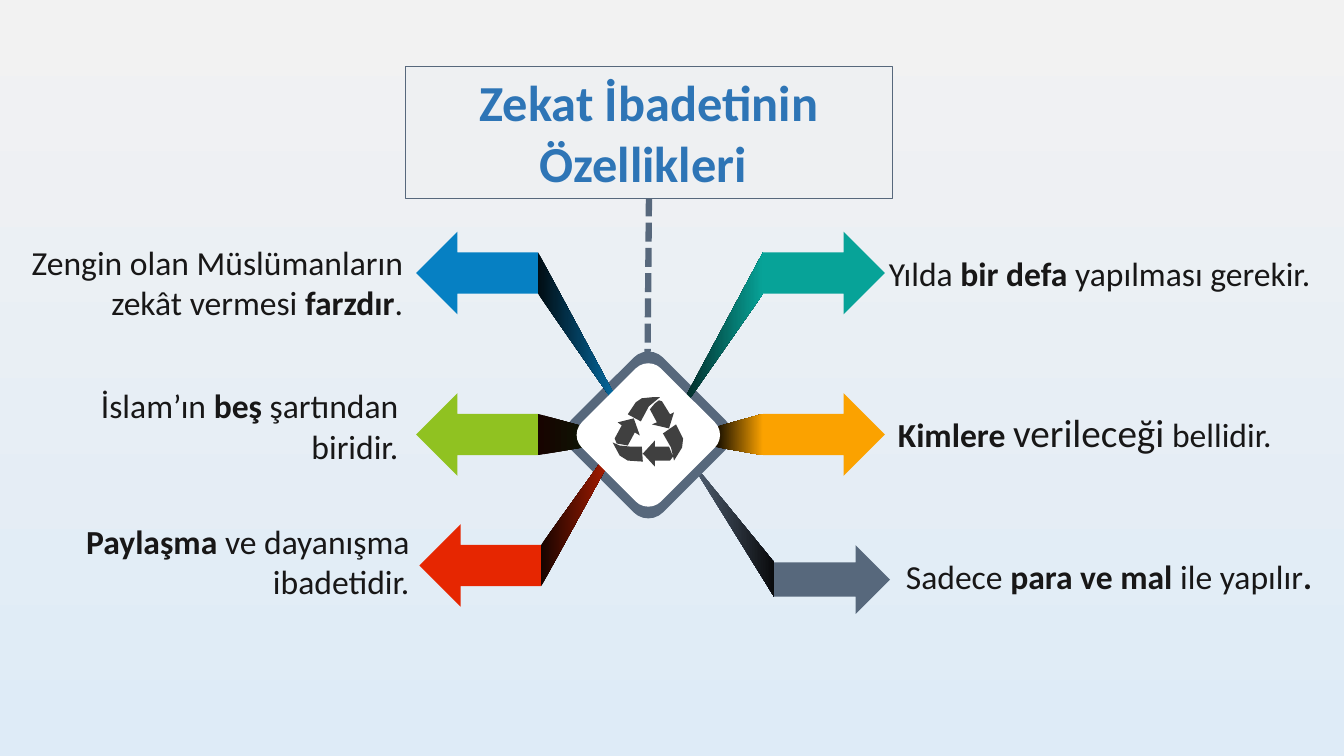
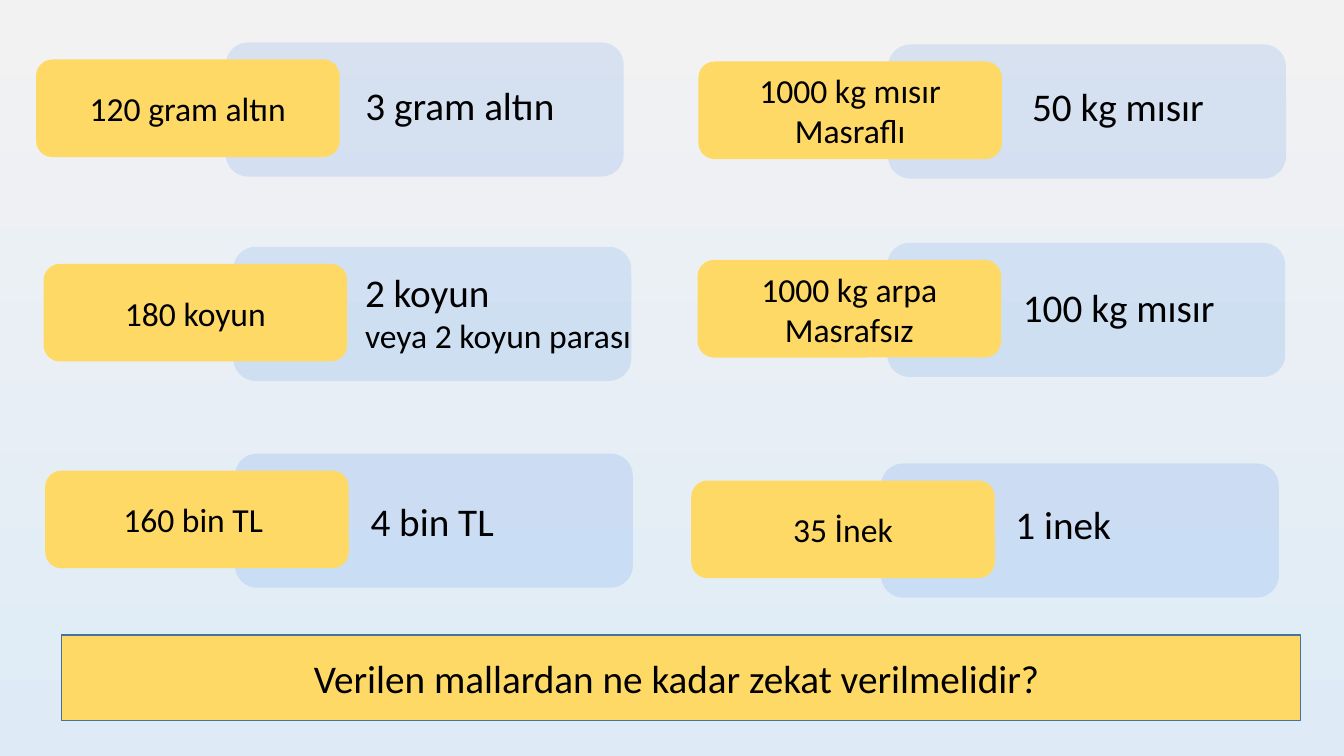
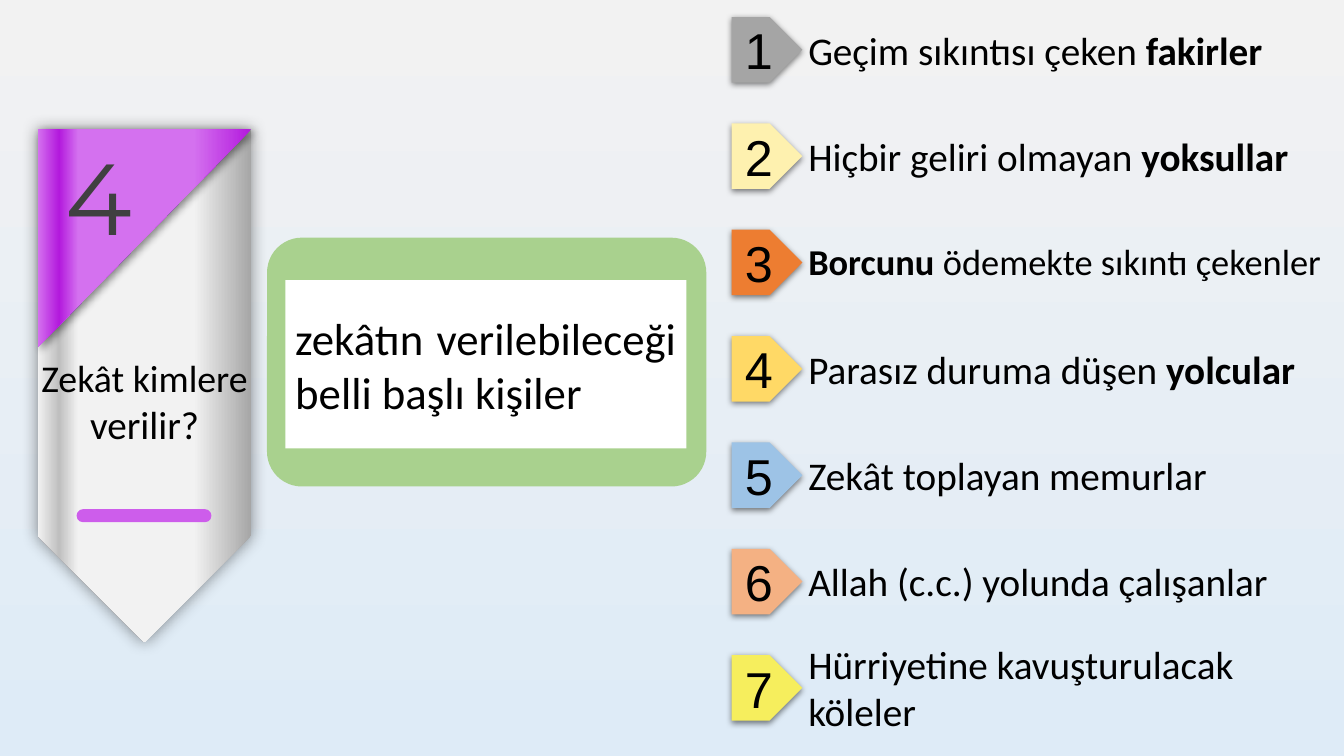
from lxml import etree
from pptx import Presentation
from pptx import util as u
from pptx.dml.color import RGBColor
from pptx.enum import dml, shapes, text
from pptx.oxml.ns import qn

HUE = {
    "top": "F2F2F2", "foot": "DEEBF7", "black": "000000", "white": "FFFFFF",
    "ink": "181717", "title": "2E75B6", "panel": "EEF0F2", "slate": "57687C",
    "teal": "07A398", "orange": "FBA200", "blue": "0680C3", "red": "E62601",
    "lime": "90C221", "icon": "404040", "gold": "FFD966", "edge": "43739E",
    "pale": "2776EA", "green": "A9D18E", "violet": "B319DD", "lilac": "D471EF",
    "bar": "CD5DEB", "grey": "A6A6A6", "silver": "BFBFBF",
    "slate_dk": "090A0C", "teal_dk": "01100F", "orange_dk": "191000",
    "blue_dk": "010D13", "red_dk": "170400", "lime_dk": "0E1303",
    "one": "A5A5A5", "two": "FEF1AF", "three": "ED7D31", "five": "9DC3E6",
    "six": "F4B183", "seven": "F6EE5D",
}
KIND = shapes.MSO_SHAPE
ALIGN = text.PP_ALIGN
MID = text.MSO_ANCHOR.MIDDLE
BOLD = {"bold": True}


def rgb(name):
    return RGBColor.from_string(HUE[name])


def cms(*vals):
    return [u.Cm(v) for v in vals]


def child(node, tag, **attrs):
    return etree.SubElement(node, qn(tag), {k: str(v) for k, v in attrs.items()})


def blend(fill, root, stops, angle):
    """Gradient from (percent, colour) stops; angle runs clockwise."""
    fill.gradient()
    fill.gradient_angle = -angle % 360
    group = root.find(".//" + qn("a:gsLst"))
    for old in list(group):
        group.remove(old)
    for pos, name in stops:
        stop = child(group, "a:gs", pos=pos * 1000)
        child(stop, "a:srgbClr", val=HUE[name])


def paint(shape, fill, line=None, width=1, shadow=None, alpha=None):
    """Fill is a colour name or a (stops, angle) pair."""
    shape.shadow.inherit = False
    props = shape._element.spPr
    if isinstance(fill, str):
        shape.fill.solid()
        shape.fill.fore_color.rgb = rgb(fill)
    else:
        blend(shape.fill, props, *fill)
    if alpha:
        child(props.find(".//" + qn("a:srgbClr")), "a:alpha", val=alpha * 1000)
    if line:
        shape.line.color.rgb = rgb(line)
        shape.line.width = u.Pt(width)
    else:
        shape.line.fill.background()
    if shadow:
        dark, blur, dist, angle = shadow
        drop = child(props.find(qn("a:effectLst")), "a:outerShdw",
                     blurRad=u.Pt(blur), dist=u.Pt(dist), dir=angle * 60000,
                     algn="ctr", rotWithShape=0)
        tone = child(drop, "a:srgbClr", val=HUE["black"])
        child(tone, "a:alpha", val=dark * 1000)
    return shape


def block(slide, kind, box, fill, turn=0, adj=None, **look):
    shape = slide.shapes.add_shape(kind, *cms(*box))
    shape.rotation = turn
    if adj is not None:
        shape.adjustments[0] = adj
    return paint(shape, fill, **look)


def write(shape, paras, size, color="black", align=ALIGN.LEFT, font="Calibri", **frame):
    """Each paragraph is a list of runs: a string, or (string, font settings)."""
    body = shape.text_frame
    for key, val in {"word_wrap": True, **frame}.items():
        setattr(body, key, val)
    for i, runs in enumerate(paras):
        para = body.paragraphs[0] if i == 0 else body.add_paragraph()
        para.alignment = align
        for item in runs:
            words, extra = (item, {}) if isinstance(item, str) else item
            run = para.add_run()
            run.text = words
            run.font.color.rgb = rgb(color)
            for key, val in {"name": font, "size": u.Pt(size), **extra}.items():
                setattr(run.font, key, val)


def label(slide, box, paras, size, **look):
    write(slide.shapes.add_textbox(*cms(*box)), paras, size,
          auto_size=text.MSO_AUTO_SIZE.SHAPE_TO_FIT_TEXT, **look)


def outline(slide, loops, fill):
    first = loops[0][0]
    pen = slide.shapes.build_freeform(*cms(*first))
    for i, loop in enumerate(loops):
        if i:
            pen.move_to(*cms(*loop[0]))
        pen.add_line_segments([cms(*pt) for pt in loop[1:]], close=True)
    return paint(pen.convert_to_shape(), fill)


def new_slide(deck):
    slide = deck.slides.add_slide(deck.slide_layouts[6])
    blend(slide.background.fill, slide._element.cSld, [(0, "top"), (100, "foot")], 90)
    return slide


def arrow(slide, box, hub, color, stops, left=False):
    """Block arrow with a ribbon narrowing from its shaft to the hub point."""
    x, y, w, h = box
    block(slide, KIND.LEFT_ARROW if left else KIND.RIGHT_ARROW, box, color)
    base = x + w if left else x
    ribbon = [(base, y + h * 3 / 4), hub, (base, y + h / 4)]
    outline(slide, [ribbon], (stops, 0))


def diamond(slide, mid, side, fill):
    x, y = mid
    block(slide, KIND.ROUNDED_RECTANGLE, (x - side / 2, y - side / 2, side, side),
          fill, turn=315, adj=0.16)


def cycle(slide, x, y, w):
    """Three chasing arrows, drawn on a grid 71 units wide."""
    loops = [
        [(0, 45), (7, 48), (17, 49), (29, 49), (30, 64), (15, 63), (7, 58)],
        [(42, 43), (42, 49), (56, 49), (60, 59), (57, 63), (42, 63), (42, 69), (30, 56)],
        [(63, 27), (70, 41), (69, 50), (61, 63), (58, 50), (50, 36)],
        [(21, 21), (27, 38), (22, 35), (15, 48), (4, 46), (2, 41), (9, 28), (5, 25)],
        [(46, 3), (49, 4), (57, 17), (61, 15), (56, 31), (39, 27), (44, 25),
         (37, 12), (42, 6)],
        [(39, 0), (47, 0), (36, 9), (28, 24), (15, 17), (23, 5), (29, 1)],
    ]
    unit = w / 71
    outline(slide, [[(x + a * unit, y + b * unit) for a, b in loop] for loop in loops],
            "icon")


def stem(slide, start, end):
    line = slide.shapes.add_connector(shapes.MSO_CONNECTOR.STRAIGHT, *cms(*start, *end))
    line.line.color.rgb = rgb("slate")
    line.line.width = u.Pt(4.5)
    line.line.dash_style = dml.MSO_LINE.SQUARE_DOT
    props = line._element.spPr
    child(props.find(qn("a:ln")), "a:tailEnd", type="triangle")
    child(props, "a:effectLst")


def traits(deck):
    slide = new_slide(deck)
    mid, w, h = (16.34, 10.96), 3.07, 2.08
    arrow(slide, (19.51, 13.74, 2.92, 1.73), (17.27, 11.43), "slate",
          [(0, "slate"), (100, "slate_dk")])
    stem(slide, (16.36, 4.34), (16.31, 9.96))
    diamond(slide, mid, 3.28, "slate")
    for x, y, hub, color, stops in [
        (19.23, 5.84, (16.81, 10.87), "teal", [(0, "teal_dk"), (100, "teal")]),
        (19.23, 9.91, (16.92, 11.07), "orange",
         [(0, "orange_dk"), (50, "orange_dk"), (100, "orange")]),
        (10.49, 5.84, (15.98, 10.87), "blue", [(0, "blue_dk"), (100, "blue")]),
        (10.57, 13.21, (16.03, 10.41), "red", [(0, "red_dk"), (100, "red")]),
        (10.49, 9.91, (15.88, 11.07), "lime",
         [(0, "red_dk"), (50, "lime_dk"), (100, "lime")]),
    ]:
        arrow(slide, (x, y, w, h), hub, color, stops, left=x < mid[0])
    diamond(slide, mid, 2.82, "white")
    cycle(slide, 15.44, 10.01, 1.8)
    head = block(slide, KIND.RECTANGLE, (10.21, 1.68, 12.29, 3.33), "panel",
                 line="slate", width=0.75)
    write(head, [[("Zekat İbadetinin Özellikleri ", BOLD)]], 36, "title", ALIGN.CENTER,
          vertical_anchor=text.MSO_ANCHOR.TOP)
    for box, runs in [
        ((0.61, 9.58, 9.68, 2.31), ["İslam’ın ", ("beş", BOLD), " şartından biridir."]),
        ((22.15, 6.25, 11.26, 1.27),
         ["Yılda ", ("bir defa ", BOLD), "yapılması gerekir."]),
        ((0, 5.97, 10.41, 2.31),
         ["Zengin olan Müslümanların zekât vermesi", (" farzdır", BOLD), "."]),
        ((22.38, 10.16, 11.05, 1.45),
         [("Kimlere ", BOLD), ("verileceği", {"size": u.Pt(28)}), " bellidir."]),
        ((22.58, 13.89, 11.28, 1.27),
         ["Sadece ", ("para ve mal ", BOLD), "ile yapılır", (".", BOLD)]),
        ((1.17, 13, 9.4, 2.31), [("Paylaşma", BOLD), " ve dayanışma ibadetidir."]),
    ]:
        label(slide, box, [runs], 24, color="ink",
              align=ALIGN.RIGHT if box[0] < mid[0] else ALIGN.LEFT)


def pads(size):
    return {"margin_" + side: u.Cm(size) for side in ("left", "top", "right", "bottom")}


def pair(slide, x, y, goods):
    block(slide, KIND.ROUNDED_RECTANGLE, (x + 4.78, y, 10.03, 3.38), "pale", alpha=13)
    front = block(slide, KIND.ROUNDED_RECTANGLE, (x, y + 0.43, 7.65, 2.46), "gold")
    write(front, [[row] for row in goods], 24, align=ALIGN.CENTER,
          vertical_anchor=MID, **pads(0.25))


def amounts(deck):
    slide = new_slide(deck)
    small = {"size": u.Pt(24)}
    for x, y, goods, dx, dy, due in [
        (0.91, 1.07, ["120 gram altın"], 8.05, 0.86, ["3 gram altın"]),
        (1.1, 6.22, ["180 koyun"], 7.85, 0.41,
         ["2 koyun", ("veya 2 koyun parası", small)]),
        (1.14, 11.43, ["160 bin TL "], 7.95, 0.97, ["4 bin TL"]),
        (17.6, 1.12, ["1000 kg mısır", "Masraflı"], 8.16, 0.84, ["50 kg mısır"]),
        (17.58, 6.12, ["1000 kg arpa", "Masrafsız"], 7.95, 0.89, ["100 kg mısır"]),
        (17.42, 11.68, ["35 İnek"], 7.92, 0.79, ["1 inek"]),
    ]:
        pair(slide, x, y, goods)
        wide, high = (8.81, 2.49) if len(due) > 1 else (6.12, 1.45)
        label(slide, (x + dx, y + dy, wide, high), [[row] for row in due], 28)
    ask = block(slide, KIND.RECTANGLE, (1.55, 16, 31.22, 2.16), "gold", line="edge")
    write(ask, [["Verilen mallardan ne kadar zekat verilmelidir? "]], 28,
          align=ALIGN.CENTER, vertical_anchor=MID)


def banner(slide, x, y):
    """Folded pennant; the plate and its corner are turned a quarter."""
    long, wide, fold = 12.93, 5.38, 5.49
    plate = [(0, "grey"), (27, "top"), (81, "top"), (90, "silver"), (100, "top")]
    flap = [(0, "violet"), (27, "lilac"), (81, "lilac"), (90, "violet"), (100, "lilac")]
    for kind, size, stops, shadow in [
        (KIND.PENTAGON, long, plate, (44, 12, 0, 0)),
        (KIND.RIGHT_TRIANGLE, fold, flap, (46, 6, 3, 45)),
    ]:
        shift = (size - wide) / 2
        block(slide, kind, (x - shift, y + shift, size, wide), (stops, 90),
              turn=90, shadow=shadow)
    block(slide, KIND.ROUNDED_RECTANGLE, (x + 0.98, y + 9.57, 3.4, 0.33), "bar", adj=0.5)
    label(slide, (x + 0.45, y + 0.02, 2.49, 3.33), [["4"]], 72, color="icon",
          font="Montserrat")
    label(slide, (x - 0.39, y + 5.55, 6.17, 2.64),
          [[("Zekât kimlere ", {"size": u.Pt(27)}), "verilir?"]], 28, align=ALIGN.CENTER)


def topic(slide, x, y):
    block(slide, KIND.ROUNDED_RECTANGLE, (x, y, 11.07, 6.27), "green", adj=0.14)
    card = block(slide, KIND.RECTANGLE, (x + 0.46, y + 1.07, 10.11, 4.24), "white")
    write(card, [["zekâtın verilebileceği belli başlı kişiler"]], 32,
          align=ALIGN.JUSTIFY, vertical_anchor=MID)


def entry(slide, x, y, num, color, runs, size=28, wide=13.36, high=1.45):
    badge = block(slide, KIND.PENTAGON, (x, y, 1.78, 1.65), color, adj=0.5,
                  shadow=(50, 4.5, 1.5, 90))
    write(badge, [[str(num)]], 36, font="Arial", vertical_anchor=MID, **pads(0.33))
    label(slide, (x + 1.68, y + (1.65 - high) / 2, wide, high), [runs], size)


def people(deck):
    slide = new_slide(deck)
    banner(slide, 0.95, 3.26)
    topic(slide, 6.73, 5.99)
    rows = [
        ("one", ["Geçim sıkıntısı çeken ", ("fakirler", BOLD)], {}),
        ("two", ["Hiçbir geliri olmayan ", ("yoksullar", BOLD)], {}),
        ("three", [("Borcunu", BOLD), " ödemekte sıkıntı çekenler"],
         {"size": 26, "wide": 14.17}),
        ("gold", ["Parasız duruma düşen ", ("yolcular", BOLD)], {}),
        ("five", ["Zekât toplayan memurlar"], {}),
        ("six", ["Allah (c.c.) yolunda çalışanlar"], {}),
        ("seven", ["Hürriyetine kavuşturulacak köleler"], {"high": 2.64}),
    ]
    for i, (color, runs, look) in enumerate(rows):
        entry(slide, 18.44, 0.43 + 2.68 * i, i + 1, color, runs, **look)


def main():
    deck = Presentation()
    deck.slide_width, deck.slide_height = cms(33.87, 19.05)
    for build in (traits, amounts, people):
        build(deck)
    deck.save("out.pptx")


if __name__ == "__main__":
    main()
